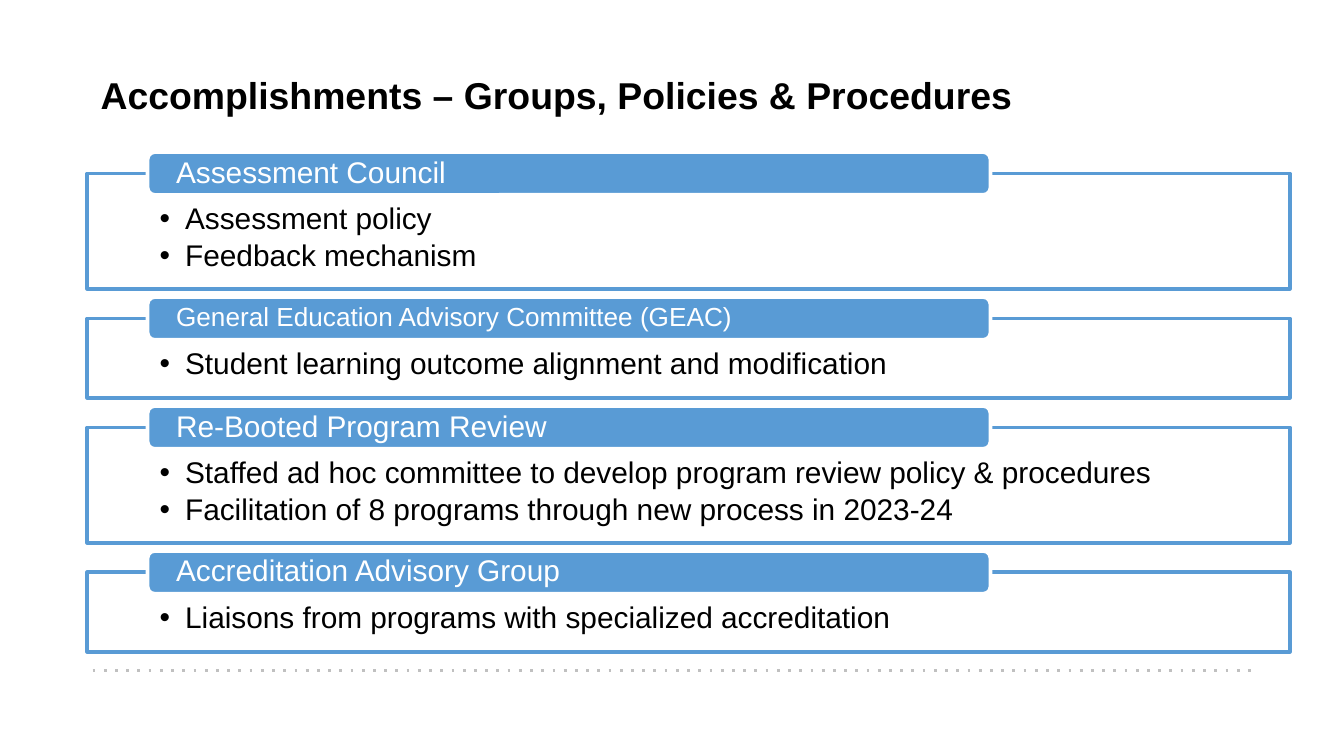
from lxml.etree import SubElement
from pptx import Presentation
from pptx.dml.color import RGBColor
from pptx.enum.shapes import MSO_CONNECTOR, MSO_SHAPE
from pptx.enum.text import MSO_ANCHOR, MSO_AUTO_SIZE, PP_ALIGN
from pptx.oxml.ns import qn
from pptx.util import Cm, Pt

BLUE = "599BD5"
WHITE = "FFFFFF"
BLACK = "000000"
GRAY = "C0C0C0"


def color(value):
    return RGBColor.from_string(value)


class SlideBuilder:
    font_name = "Arial"
    left = 1.65
    width = 22.73
    heading_height = 0.81

    def __init__(self, page):
        self.page = page

    def format_paragraph(self, para, size, ink, spacing=0.9, bold=False):
        para.alignment = PP_ALIGN.LEFT
        para.line_spacing = spacing
        for span in para.runs:
            span.font.name = self.font_name
            span.font.size = Pt(size)
            span.font.bold = bold
            span.font.color.rgb = color(ink)

    def set_frame(self, frame, anchor, margins):
        frame.word_wrap = True
        frame.auto_size = MSO_AUTO_SIZE.NONE
        frame.vertical_anchor = anchor
        frame.margin_left, frame.margin_top, frame.margin_right, frame.margin_bottom = map(Cm, margins)

    def title(self, text):
        title = self.page.shapes.title
        title.left, title.top, title.width, title.height = Cm(self.left), Cm(1.4), Cm(22.2), Cm(1.7)
        frame = title.text_frame
        frame.text = text
        self.set_frame(frame, MSO_ANCHOR.TOP, (0.25, 0.13, 0.25, 0.13))
        self.format_paragraph(frame.paragraphs[0], 20, BLACK, spacing=0.8, bold=True)

    def shape(self, kind, left, top, width, height, fill, outline):
        box = self.page.shapes.add_shape(kind, Cm(left), Cm(top), Cm(width), Cm(height))
        box.shadow.inherit = False
        box.fill.solid()
        box.fill.fore_color.rgb = color(fill)
        box.line.color.rgb = color(outline)
        box.line.width = Pt(2)
        return box

    def bullet(self, para):
        para.level = 1
        properties = para._p.get_or_add_pPr()
        properties.set("marL", str(Cm(0.48)))
        properties.set("indent", str(-Cm(0.48)))
        bullet_color = SubElement(properties, qn("a:buClr"))
        SubElement(bullet_color, qn("a:srgbClr"), val=BLACK)
        SubElement(properties, qn("a:buFont"), typeface=self.font_name)
        SubElement(properties, qn("a:buChar"), char="•")

    def panel(self, top, height, items):
        box = self.shape(MSO_SHAPE.RECTANGLE, self.left, top, self.width, height, WHITE, BLUE)
        fill_color = box._element.spPr.find(qn("a:solidFill")).find(qn("a:srgbClr"))
        SubElement(fill_color, qn("a:alpha"), val="90000")
        frame = box.text_frame
        frame.text = "\n".join(items)
        self.set_frame(frame, MSO_ANCHOR.TOP, (1.37, 0.58, 1.37, 0.3))
        for index, para in enumerate(frame.paragraphs):
            self.bullet(para)
            self.format_paragraph(para, 16, BLACK)
            if index:
                para.space_before = Pt(2.4)

    def heading(self, middle, text, size):
        top = middle - self.heading_height / 2
        box = self.shape(MSO_SHAPE.ROUNDED_RECTANGLE, 2.79, top, 15.93, self.heading_height, BLUE, WHITE)
        frame = box.text_frame
        frame.text = text
        self.set_frame(frame, MSO_ANCHOR.MIDDLE, (0.5, 0, 0.5, 0))
        self.format_paragraph(frame.paragraphs[0], size, WHITE)

    def dotted_rule(self, left, right, top):
        rule = self.page.shapes.add_connector(MSO_CONNECTOR.STRAIGHT, Cm(left), Cm(top), Cm(right), Cm(top))
        rule.line.color.rgb = color(GRAY)
        rule.line.width = Pt(1.5)
        properties = rule._element.spPr
        SubElement(properties.find(qn("a:ln")), qn("a:prstDash"), val="dot")
        SubElement(properties, qn("a:effectLst"))


def main():
    deck = Presentation()
    deck.slide_width, deck.slide_height = Cm(25.4), Cm(14.29)
    builder = SlideBuilder(deck.slides.add_slide(deck.slide_layouts[5]))
    builder.dotted_rule(1.75, 23.67, 12.67)
    builder.title("Accomplishments – Groups, Policies & Procedures")

    groups = [
        ("Assessment Council", 16, ["Assessment policy", "Feedback mechanism"]),
        ("General Education Advisory Committee (GEAC)", 14,
         ["Student learning outcome alignment and modification"]),
        ("Re-Booted Program Review", 16,
         ["Staffed ad hoc committee to develop program review policy & procedures",
          "Facilitation of 8 programs through new process in 2023-24"]),
        ("Accreditation Advisory Group", 16,
         ["Liaisons from programs with specialized accreditation"]),
    ]
    top = 3.28
    for name, size, items in groups:
        height = 0.82 + 0.68 * len(items)
        builder.panel(top, height, items)
        builder.heading(top, name, size)
        top += height + 0.56

    deck.save("out.pptx")


if __name__ == "__main__":
    main()
